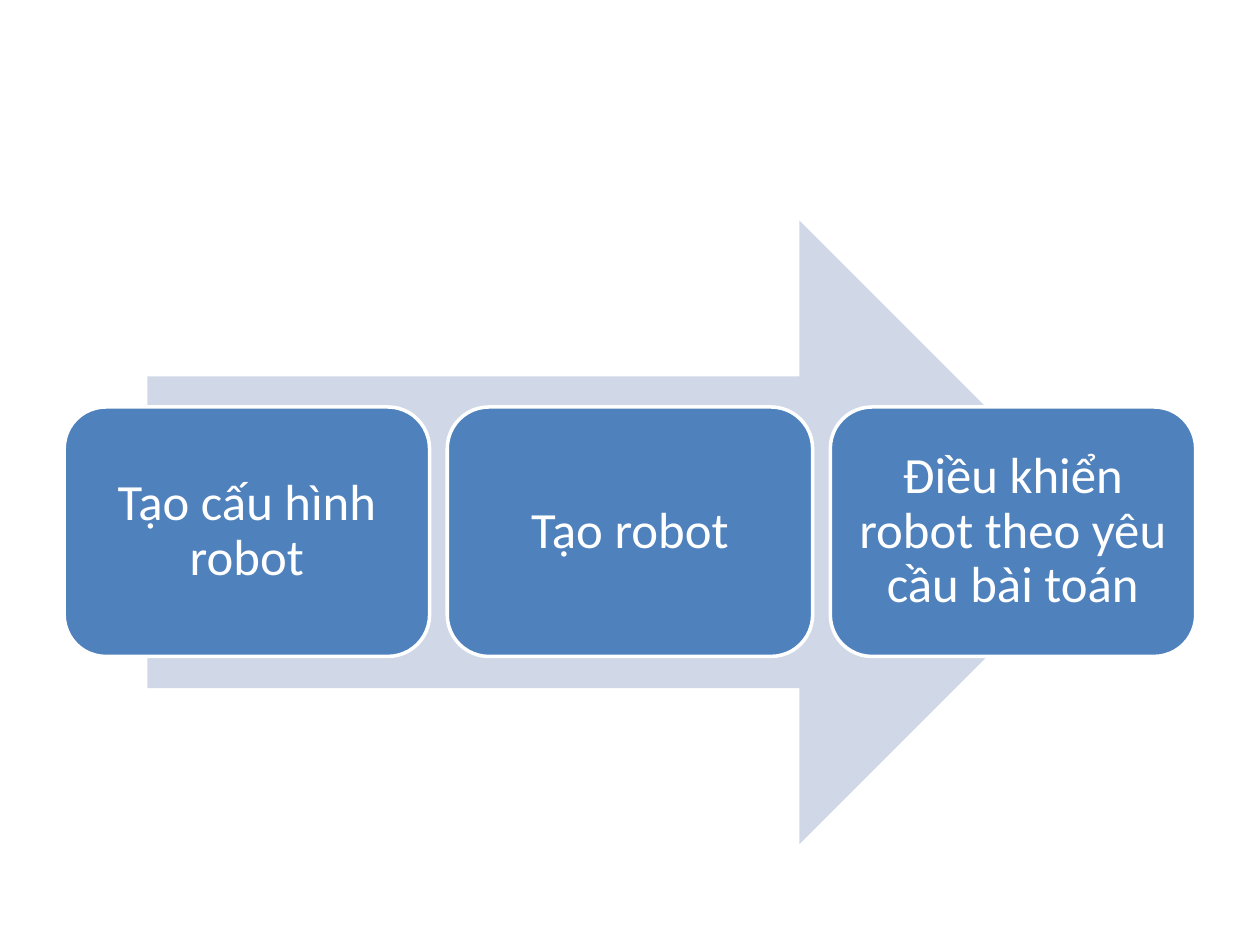
import pptx
import pptx.dml.color
import pptx.enum.shapes
import pptx.enum.text
import pptx.util

ARROW_BLUE = pptx.dml.color.RGBColor(0xD0, 0xD8, 0xE8)
CARD_BLUE = pptx.dml.color.RGBColor(0x4F, 0x81, 0xBD)
WHITE = pptx.dml.color.RGBColor(0xFF, 0xFF, 0xFF)

SLIDE_WIDTH = pptx.util.Inches(10)
SLIDE_HEIGHT = pptx.util.Inches(7.5)

STEPS = [
    "Tạo cấu hình robot",
    "Tạo robot",
    "Điều khiển robot theo yêu cầu bài toán",
]


class ProcessSlide:
    """Holds the style and the slide; lengths are inches on a 10 by 7.5 grid."""

    font_name = "Calibri"
    font_size = pptx.util.Pt(29)
    inset = pptx.util.Inches(0.12)
    outline_width = pptx.util.Pt(2)
    columns, rows = 10, 7.5

    def __init__(self, slide):
        self.slide = slide

    def add_filled_shape(self, kind, left, top, width, height, color):
        column = SLIDE_WIDTH / self.columns
        row = SLIDE_HEIGHT / self.rows
        shape = self.slide.shapes.add_shape(
            kind, round(left * column), round(top * row),
            round(width * column), round(height * row))
        shape.shadow.inherit = False
        shape.fill.solid()
        shape.fill.fore_color.rgb = color
        shape.line.fill.background()
        return shape

    def add_arrow(self, left, top, width, height):
        return self.add_filled_shape(
            pptx.enum.shapes.MSO_SHAPE.RIGHT_ARROW,
            left, top, width, height, ARROW_BLUE)

    def add_card(self, text, left, top, width, height):
        card = self.add_filled_shape(
            pptx.enum.shapes.MSO_SHAPE.ROUNDED_RECTANGLE,
            left, top, width, height, CARD_BLUE)
        card.line.color.rgb = WHITE
        card.line.width = self.outline_width

        frame = card.text_frame
        frame.word_wrap = True
        frame.vertical_anchor = pptx.enum.text.MSO_ANCHOR.MIDDLE
        frame.margin_left = frame.margin_right = self.inset
        frame.margin_top = frame.margin_bottom = self.inset

        paragraph = frame.paragraphs[0]
        paragraph.text = text
        paragraph.alignment = pptx.enum.text.PP_ALIGN.CENTER
        paragraph.line_spacing = 0.9
        paragraph.font.name = self.font_name
        paragraph.font.size = self.font_size
        paragraph.font.color.rgb = WHITE
        return card

    def add_card_row(self, texts, top, width, height, gap):
        """Place equal cards in a row centred across the slide."""
        pitch = width + gap
        left = (self.columns - (len(texts) * pitch - gap)) / 2
        for index, text in enumerate(texts):
            self.add_card(text, left + index * pitch, top, width, height)


def main():
    presentation = pptx.Presentation()
    presentation.slide_width = SLIDE_WIDTH
    presentation.slide_height = SLIDE_HEIGHT
    blank_layout = presentation.slide_layouts[6]
    process = ProcessSlide(presentation.slides.add_slide(blank_layout))
    process.add_arrow(left=1.17, top=1.75, width=7.65, height=4.95)
    process.add_card_row(STEPS, top=3.23, width=2.9, height=1.98, gap=0.14)
    presentation.save("out.pptx")


if __name__ == "__main__":
    main()
